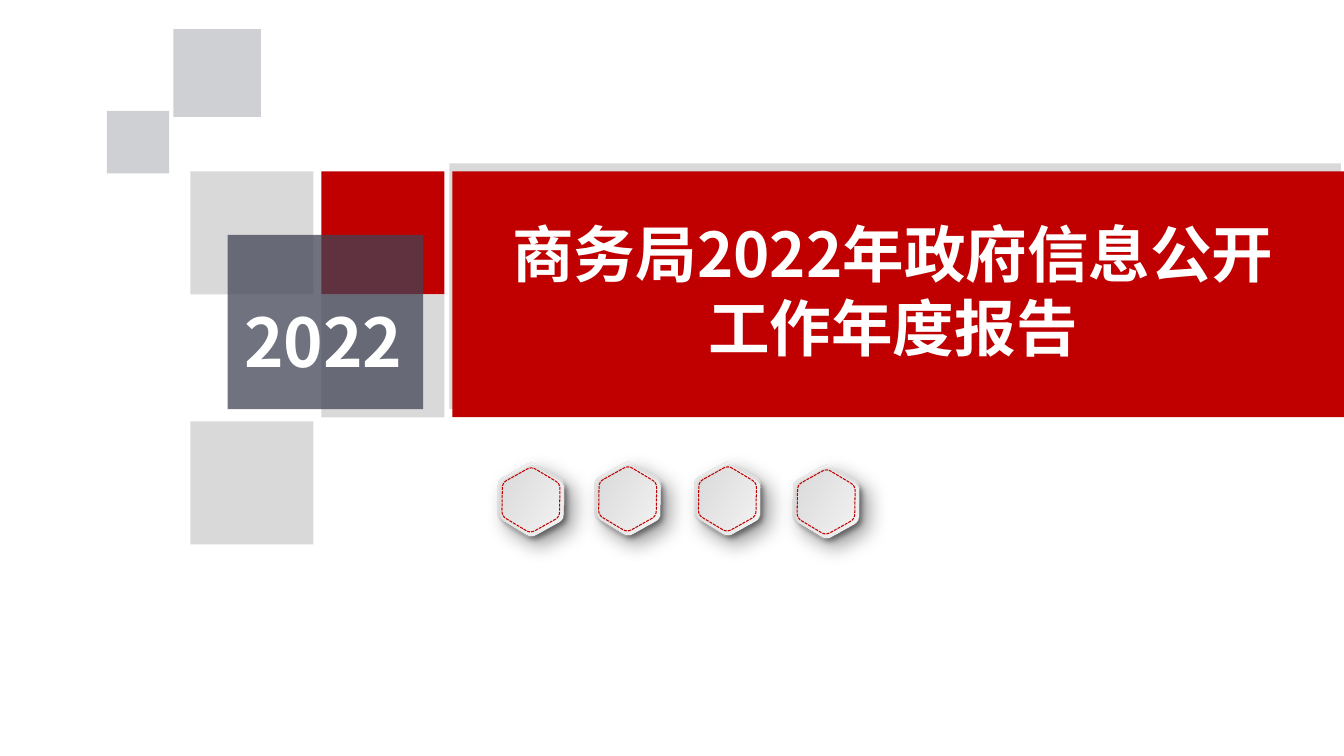
import math

from lxml import etree
from pptx import Presentation
from pptx import util as u
from pptx.dml.color import RGBColor
from pptx.enum import dml, shapes, text
from pptx.oxml import ns

RED = RGBColor(0xC0, 0x00, 0x00)
GREY = RGBColor(0xD9, 0xD9, 0xD9)
SLATE = RGBColor(0x41, 0x44, 0x55)
WHITE = RGBColor(0xFF, 0xFF, 0xFF)
SILVER = RGBColor(0xD3, 0xD3, 0xD3)
PALE = RGBColor(0xF9, 0xF9, 0xF9)

TILE = 1.22
BADGE_CENTRES = [(5.27, 4.96), (6.23, 4.95), (7.22, 4.95), (8.2, 4.98)]


class Cover:
    font = "Noto Sans CJK SC"
    tilt = 30.9
    corner = 0.05

    def __init__(self, prs):
        self.s = prs.slides.add_slide(prs.slide_layouts[5])

    def block(self, x, y, w, h, color, alpha=100):
        sp = self.s.shapes.add_shape(
            shapes.MSO_SHAPE.RECTANGLE, *map(u.Inches, (x, y, w, h)))
        sp.shadow.inherit = False
        sp.line.fill.background()
        sp.fill.solid()
        sp.fill.fore_color.rgb = color
        if alpha < 100:
            clr = sp._element.spPr.find(".//" + ns.qn("a:srgbClr"))
            etree.SubElement(clr, ns.qn("a:alpha"), val=str(alpha * 1000))

    def set_text(self, sp, lines, box, size, spacing):
        """Place a text shape and fill it with centred bold white lines."""
        sp.left, sp.top, sp.width, sp.height = map(u.Inches, box)
        tf = sp.text_frame
        tf.text = "\n".join(lines)
        tf.word_wrap = True
        tf.auto_size = text.MSO_AUTO_SIZE.NONE
        tf.vertical_anchor = text.MSO_ANCHOR.TOP
        tf.margin_left = tf.margin_right = tf.margin_top = tf.margin_bottom = 0
        for p in tf.paragraphs:
            p.alignment = text.PP_ALIGN.CENTER
            p.line_spacing = u.Pt(spacing)
            for r in p.runs:
                r.font.size = u.Pt(size)
                r.font.bold = True
                r.font.color.rgb = WHITE
                r.font.name = self.font
                etree.SubElement(r.font._element, ns.qn("a:ea"), typeface=self.font)

    def label(self, line, box, size, spacing):
        sp = self.s.shapes.add_textbox(0, 0, 0, 0)
        self.set_text(sp, [line], box, size, spacing)

    def title(self, lines, box, size, spacing):
        sp = self.s.shapes.title
        self.s.shapes._spTree.append(sp._element)  # bring above the band
        self.set_text(sp, lines, box, size, spacing)

    def hexagon(self, cx, cy, radius):
        """Add a tilted hexagon whose corners are rounded by quadratic curves."""
        vertices = [(cx + radius * math.cos(math.radians(a)),
                     cy + radius * math.sin(math.radians(a)))
                    for a in range(0, 360, 60)]
        cut = self.corner / radius
        points = []
        for i, v in enumerate(vertices):
            before, after = vertices[i - 1], vertices[(i + 1) % 6]
            for t in (0, 0.25, 0.5, 0.75, 1):
                points.append(tuple(
                    u.Inches(c + cut * ((1 - t) ** 2 * (b - c) + t ** 2 * (a - c)))
                    for b, c, a in zip(before, v, after)))
        builder = self.s.shapes.build_freeform(*points[0])
        builder.add_line_segments(points[1:], close=True)
        sp = builder.convert_to_shape()
        sp.rotation = self.tilt
        sp.shadow.inherit = False
        return sp

    def raised_hexagon(self, cx, cy, radius, angle, blur, dist):
        sp = self.hexagon(cx, cy, radius)
        sp.line.fill.background()
        sp.fill.gradient()
        sp.fill.gradient_angle = angle
        for stop, color in zip(sp.fill.gradient_stops, (SILVER, PALE)):
            stop.color.rgb = color
        effects = sp._element.spPr.find(ns.qn("a:effectLst"))
        shadow = etree.SubElement(
            effects, ns.qn("a:outerShdw"), blurRad=str(int(u.Pt(blur))),
            dist=str(int(u.Pt(dist))), dir=str(45 * 60000), algn="tl",
            rotWithShape="0")
        clr = etree.SubElement(shadow, ns.qn("a:srgbClr"), val="000000")
        etree.SubElement(clr, ns.qn("a:alpha"), val="40000")

    def badge(self, cx, cy):
        self.raised_hexagon(cx, cy, 0.38, angle=90, blur=15, dist=9)
        self.raised_hexagon(cx + 0.01, cy + 0.01, 0.36, angle=0, blur=4, dist=3)
        rim = self.hexagon(cx, cy, 0.33)
        rim.fill.background()
        rim.line.color.rgb = RED
        rim.line.width = u.Pt(0.75)
        rim.line.dash_style = dml.MSO_LINE.SQUARE_DOT


def main():
    prs = Presentation()
    prs.slide_width, prs.slide_height = u.Inches(13.34), u.Inches(7.5)
    cover = Cover(prs)

    cover.block(4.46, 1.62, 8.85, 2.44, GREY)
    cover.block(4.49, 1.7, 8.85, 2.44, RED)
    for x, y, color in [(3.19, 1.7, RED), (3.19, 2.92, GREY),
                        (1.89, 1.7, GREY), (1.89, 4.18, GREY)]:
        cover.block(x, y, TILE, TILE, color)
    for x, y, side in [(1.72, 0.29, 0.87), (1.06, 1.1, 0.62)]:
        cover.block(x, y, side, side, SLATE, alpha=25)
    cover.block(2.26, 2.33, 1.94, 1.73, SLATE, alpha=75)

    cover.label("2022", (2.26, 2.97, 1.9, 0.81), size=48, spacing=58)
    cover.title(["商务局2022年政府信息公开", "工作年度报告"],
                (4.78, 2.14, 8.17, 1.83), size=44, spacing=53)
    for cx, cy in BADGE_CENTRES:
        cover.badge(cx, cy)

    prs.save("out.pptx")


if __name__ == "__main__":
    main()
